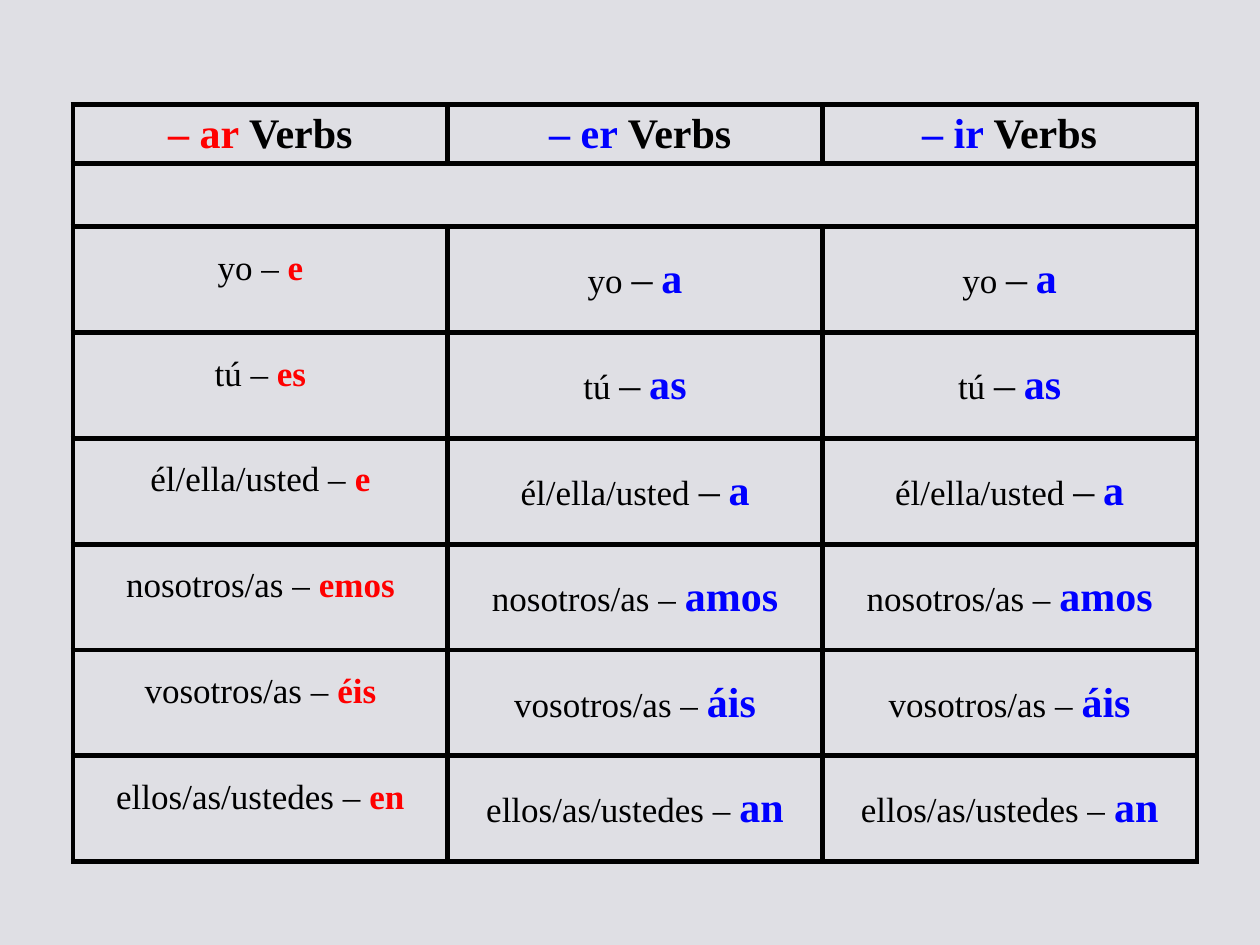
from lxml.etree import SubElement
from pptx import Presentation
from pptx.dml.color import RGBColor
from pptx.enum.text import MSO_ANCHOR, PP_ALIGN
from pptx.oxml.ns import qn
from pptx.util import Inches, Pt

COLORS = {"back": "DFDFE4", "ink": "000000", "ar": "FF0000", "er_ir": "0000FF"}
FONT = "Times New Roman"
SMALL, LARGE = 20, 24
BORDER = Pt(3)
MARGIN, RAISED_MARGIN = 0.04, 0.22

HEADINGS = [("– ar ", "ar"), (" – er ", "er_ir"), ("– ir ", "er_ir")]
# pronoun, -ar ending, -er/-ir ending, size of the dash before the latter
ENDINGS = [
    ("yo", "e", "a", LARGE),
    ("tú", "es", "as", LARGE),
    ("él/ella/usted", "e", "a", LARGE),
    ("nosotros/as", "emos", "amos", SMALL),
    ("vosotros/as", "éis", "áis", SMALL),
    ("ellos/as/ustedes", "en", "an", SMALL),
]
HEADING_HEIGHT, GAP_HEIGHT, ENDING_HEIGHT = 0.47, 0.5, 0.84


def rgb(name):
    return RGBColor.from_string(COLORS[name])


def frame_cell(cell):
    """Clear the cell's fill and draw a border on all four sides."""
    cell.margin_top = cell.margin_bottom = Inches(MARGIN)
    cell.vertical_anchor = MSO_ANCHOR.MIDDLE
    props = cell._tc.get_or_add_tcPr()
    for side in ("a:lnL", "a:lnR", "a:lnT", "a:lnB"):
        line = SubElement(props, qn(side), w=str(BORDER))
        SubElement(SubElement(line, qn("a:solidFill")), qn("a:srgbClr"), val=COLORS["ink"])
    cell.fill.background()


def write_cell(cell, parts):
    """Write parts, each a tuple of text, size, colour name and bold."""
    paragraph = cell.text_frame.paragraphs[0]
    paragraph.alignment = PP_ALIGN.CENTER
    for text, size, color, bold in parts:
        run = paragraph.add_run()
        run.text = text
        run.font.name = FONT
        run.font.size = Pt(size)
        run.font.bold = bold
        run.font.color.rgb = rgb(color)


def add_verb_table(slide, left, top, width):
    heights = [HEADING_HEIGHT, GAP_HEIGHT] + [ENDING_HEIGHT] * len(ENDINGS)
    table = slide.shapes.add_table(
        len(heights), len(HEADINGS), left, top, width, Inches(sum(heights))
    ).table
    table.first_row = table.horz_banding = False
    for column in table.columns:
        column.width = width // len(HEADINGS)
    for row, height in zip(table.rows, heights):
        row.height = Inches(height)
    for cell in table.iter_cells():
        frame_cell(cell)

    for col, (ending, color) in enumerate(HEADINGS):
        write_cell(table.cell(0, col),
                   [(ending, LARGE, color, True), ("Verbs", LARGE, "ink", True)])
    table.cell(1, 0).merge(table.cell(1, len(HEADINGS) - 1))

    for row, (pronoun, ar_ending, er_ending, dash_size) in enumerate(ENDINGS, start=2):
        ar_cell = table.cell(row, 0)
        ar_cell.margin_bottom = Inches(RAISED_MARGIN)
        write_cell(ar_cell, [(f"{pronoun} – ", SMALL, "ink", False),
                             (ar_ending, SMALL, "ar", True)])
        for col in (1, 2):
            write_cell(table.cell(row, col), [
                (f"{pronoun} ", SMALL, "ink", False),
                ("–", dash_size, "ink", False),
                (" ", SMALL, "ink", False),
                (er_ending, LARGE, "er_ir", True),
            ])


def main():
    deck = Presentation()
    deck.slide_width, deck.slide_height = Inches(10), Inches(7.5)
    slide = deck.slides.add_slide(deck.slide_layouts[6])
    slide.background.fill.solid()
    slide.background.fill.fore_color.rgb = rgb("back")
    add_verb_table(slide, Inches(0.58), Inches(0.83), Inches(8.92))
    deck.save("out.pptx")


if __name__ == "__main__":
    main()
